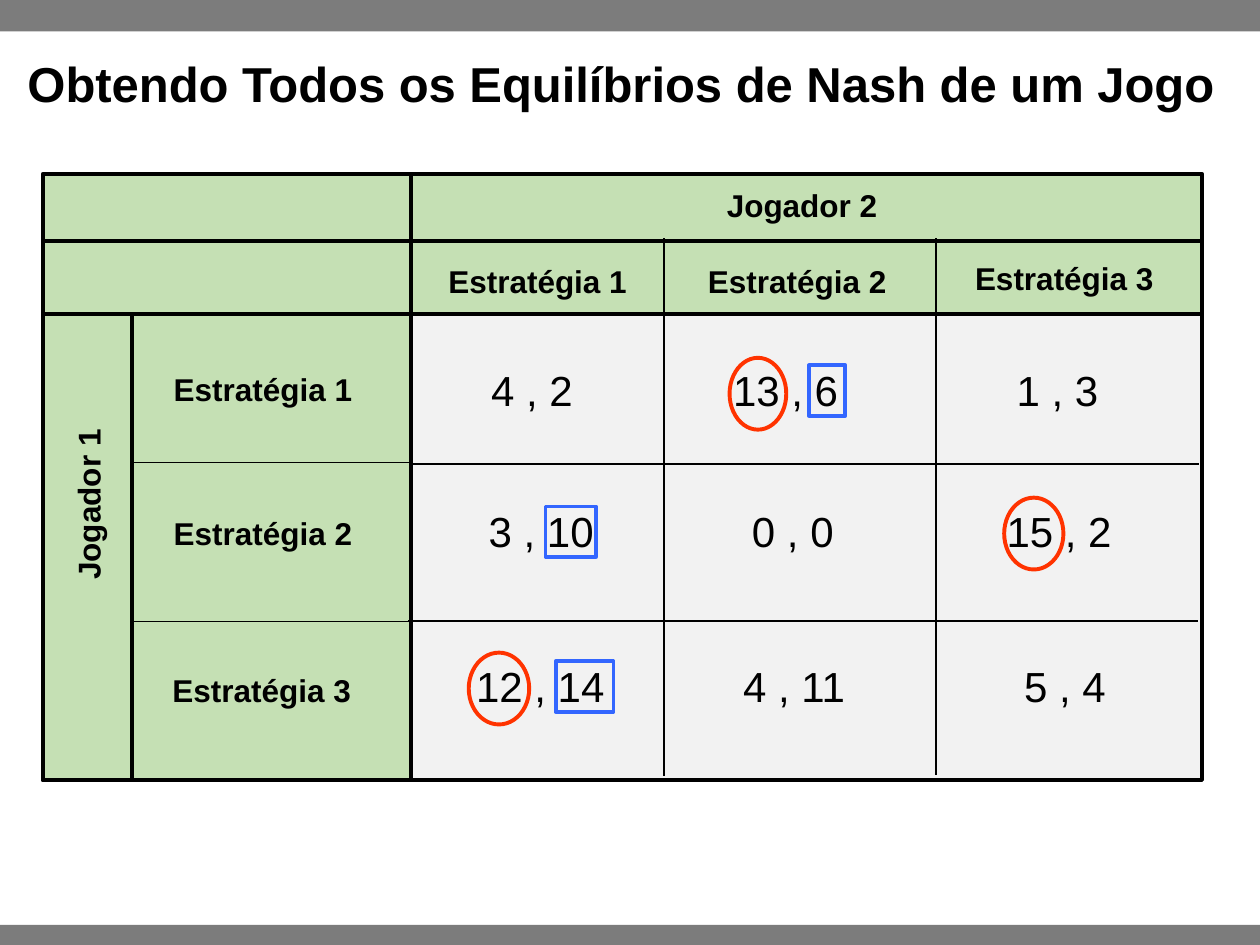
import pptx
import pptx.util
import pptx.dml.color
import pptx.enum.shapes
import pptx.enum.text
import pptx.oxml.ns
import lxml.etree

Inches, Pt = pptx.util.Inches, pptx.util.Pt
RGBColor = pptx.dml.color.RGBColor
SHAPE = pptx.enum.shapes.MSO_SHAPE

BLACK = RGBColor(0x00, 0x00, 0x00)
GRAY = RGBColor(0x7C, 0x7C, 0x7C)
GREEN = RGBColor(0xC5, 0xE0, 0xB4)
LIGHT = RGBColor(0xF2, 0xF2, 0xF2)
RED = RGBColor(0xFF, 0x33, 0x00)
BLUE = RGBColor(0x33, 0x66, 0xFF)


def add_text(text, left, top, width, height=0.4, size=18, bold=True, rotation=0, line_spacing=None):
    tb = s.shapes.add_textbox(Inches(left), Inches(top), Inches(width), Inches(height))
    tb.rotation = rotation
    tf = tb.text_frame
    tf.word_wrap = True
    tf.vertical_anchor = pptx.enum.text.MSO_ANCHOR.TOP
    p = tf.paragraphs[0]
    p.line_spacing = line_spacing
    r = p.add_run()
    r.text = text
    r.font.name = "Arial"
    r.font.size = Pt(size)
    r.font.bold = bold
    r.font.color.rgb = BLACK


def add_box(left, top, width, height, kind=SHAPE.RECTANGLE, fill=None, line=None):
    sp = s.shapes.add_shape(kind, Inches(left), Inches(top), Inches(width), Inches(height))
    sp.shadow.inherit = False
    if fill is None:
        sp.fill.background()
    else:
        sp.fill.solid()
        sp.fill.fore_color.rgb = fill
    if line is None:
        sp.line.fill.background()
    else:
        sp.line.color.rgb = line
        sp.line.width = Pt(2.25)


prs = pptx.Presentation()
prs.slide_width, prs.slide_height = Inches(10), Inches(7.5)
s = prs.slides.add_slide(prs.slide_layouts[6])

# Top and bottom bands, then the title
for top, height in ((0, 0.25), (7.34, 0.16)):
    add_box(0, top, 10, height, fill=GRAY)
add_text("Obtendo Todos os Equilíbrios de Nash de um Jogo", 0.12, 0.43, 10.07, 0.85,
         size=28, line_spacing=0.9)

# Payoff matrix: header areas, player 1 column, payoff area, outer frame
add_box(0.33, 2.49, 2.93, 3.7, fill=GREEN)
add_box(0.33, 1.38, 9.21, 1.11, fill=GREEN)
add_box(0.34, 2.49, 0.71, 3.7, line=BLACK)
add_box(3.26, 2.49, 6.28, 3.7, fill=LIGHT, line=BLACK)
add_box(0.34, 1.38, 9.2, 4.81, line=BLACK)

# Grid lines: x1, y1, x2, y2, weight
grid_lines = [
    (0.33, 1.91, 9.54, 1.91, 2.25),
    (0.33, 2.49, 3.26, 2.49, 2.25),
    (3.26, 1.39, 3.26, 2.49, 2.25),
    (5.27, 1.89, 5.27, 6.16, 1),
    (7.43, 1.89, 7.43, 6.15, 1),
    (3.26, 3.68, 9.52, 3.68, 1),
    (3.24, 4.93, 9.51, 4.93, 1),
    (1.05, 3.67, 3.26, 3.67, 0.5),
    (1.05, 4.93, 3.24, 4.93, 0.5),
]
for x1, y1, x2, y2, weight in grid_lines:
    line = s.shapes.add_connector(pptx.enum.shapes.MSO_CONNECTOR.STRAIGHT,
                                  Inches(x1), Inches(y1), Inches(x2), Inches(y2))
    line.line.color.rgb = BLACK
    line.line.width = Pt(weight)
    lxml.etree.SubElement(line._element.spPr, pptx.oxml.ns.qn("a:effectLst"))

# Players and strategies
add_text("Jogador 2", 5.67, 1.43, 2.7)
add_text("Jogador 1", -0.02, 3.78, 1.44, rotation=270)
row_labels = [(1.28, 2.89), (1.28, 4.03), (1.27, 5.28)]
column_labels = [(3.46, 2.03), (5.52, 2.03), (7.64, 2.01)]
for labels in (row_labels, column_labels):
    for number, (left, top) in enumerate(labels, 1):
        add_text(f"Estratégia {number}", left, top, 1.86)

# Payoffs: top of each row, then left edge and text of each cell
payoff_rows = [
    (2.84, [(3.8, "4 , 2"), (5.72, "13 , 6"), (7.97, "1 , 3")]),
    (3.96, [(3.78, "3 , 10"), (5.87, "0 , 0"), (7.89, "15 , 2")]),
    (5.19, [(3.68, "12 , 14"), (5.8, "4 , 11"), (8.03, "5 , 4")]),
]
for top, cells in payoff_rows:
    for left, payoff in cells:
        add_text(payoff, left, top, 1.3, 0.5, size=24, bold=False)

# Best responses: ellipses for player 1, rectangles for player 2
for left, top, width in ((5.79, 2.84, 0.45), (7.97, 3.95, 0.47), (3.72, 5.18, 0.48)):
    add_box(left, top, width, 0.57, kind=SHAPE.OVAL, line=RED)
for left, top, width in ((6.42, 2.9, 0.29), (4.33, 4.02, 0.4), (4.41, 5.25, 0.46)):
    add_box(left, top, width, 0.4, line=BLUE)

prs.save("out.pptx")
